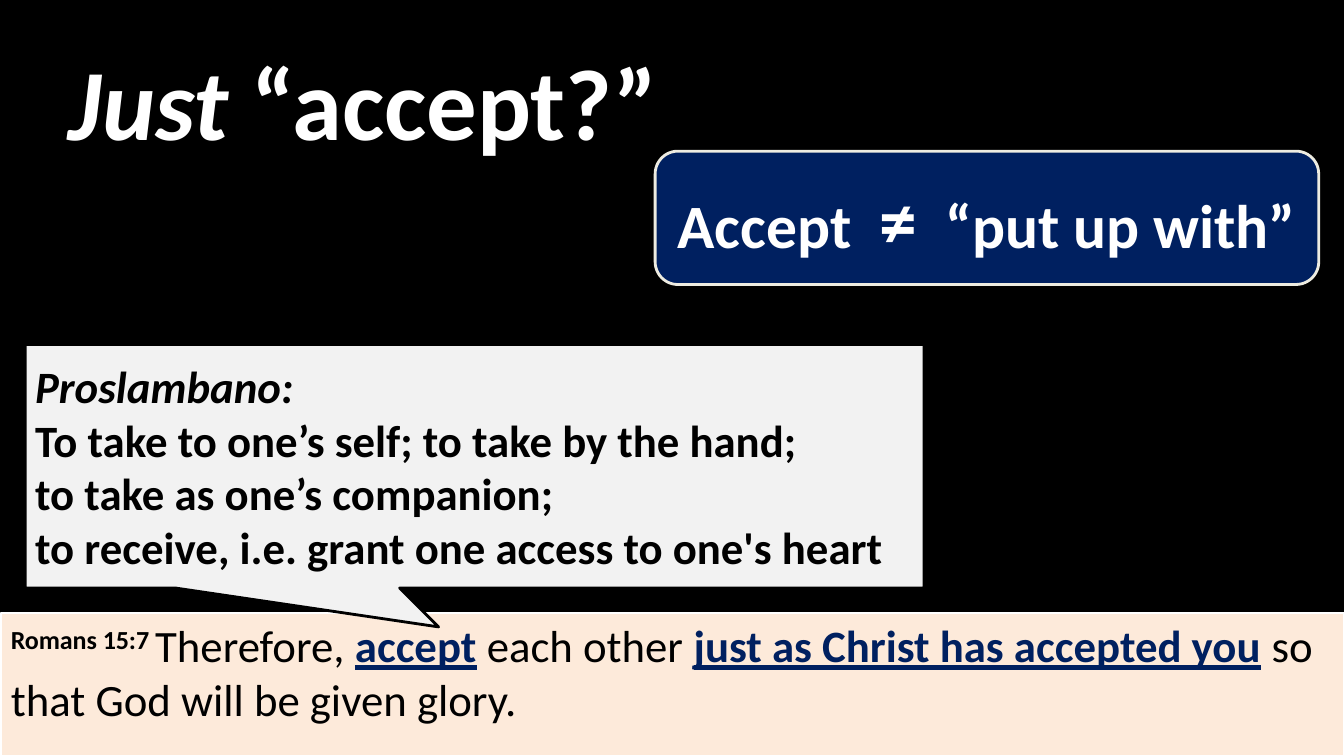
import pptx
import pptx.util
import pptx.dml.color
import pptx.enum.shapes
import pptx.enum.text
import pptx.oxml.ns
import lxml.etree

RGB = pptx.dml.color.RGBColor
SHAPE = pptx.enum.shapes.MSO_SHAPE
ALIGN = pptx.enum.text.PP_ALIGN
ANCHOR = pptx.enum.text.MSO_ANCHOR

BLACK = RGB(0x00, 0x00, 0x00)
WHITE = RGB(0xFF, 0xFF, 0xFF)
NAVY = RGB(0x00, 0x20, 0x60)
PEACH = RGB(0xFD, 0xEA, 0xDA)
GRAY = RGB(0xF2, 0xF2, 0xF2)
CREAM = RGB(0xEE, 0xEC, 0xE1)

FONT = "Calibri"


def px(n):
    return pptx.util.Emu(n * 9525)


def add_box(s, kind, box, fill, line=None, width=2, adj=(), anchor=ANCHOR.MIDDLE):
    sp = s.shapes.add_shape(kind, *map(px, box))
    sp.shadow.inherit = False
    sp.fill.solid()
    sp.fill.fore_color.rgb = fill
    if line is None:
        sp.line.fill.background()
    else:
        sp.line.color.rgb = line
        sp.line.width = pptx.util.Pt(width)
    for i, value in enumerate(adj):
        sp.adjustments[i] = value
    sp.text_frame.word_wrap = True
    sp.text_frame.vertical_anchor = anchor
    return sp


def set_alpha(sp, percent):
    color = sp.fill._xPr.find(".//" + pptx.oxml.ns.qn("a:srgbClr"))
    alpha = lxml.etree.SubElement(color, pptx.oxml.ns.qn("a:alpha"))
    alpha.set("val", str(percent * 1000))


def add_run(p, text, size, color, bold=True, italic=False, underline=False, raised=False):
    r = p.add_run()
    r.text = text
    r.font.name = FONT
    r.font.size = pptx.util.Pt(size)
    r.font.color.rgb = color
    r.font.bold = bold
    r.font.italic = italic
    r.font.underline = underline
    if raised:
        r._r.get_or_add_rPr().set("baseline", "30000")


def first_paragraph(sp, align=ALIGN.LEFT):
    p = sp.text_frame.paragraphs[0]
    p.alignment = align
    return p


def add_title(s):
    sp = add_box(s, SHAPE.RECTANGLE, (56, 32, 1200, 127), BLACK)
    set_alpha(sp, 58)
    p = first_paragraph(sp)
    add_run(p, "Just", 72, WHITE, italic=True)
    add_run(p, " “accept?”", 72, WHITE)


def add_verse(s):
    sp = add_box(s, SHAPE.RECTANGLE, (1, 584, 1279, 136), PEACH, WHITE, 1.5,
                 anchor=ANCHOR.TOP)
    p = first_paragraph(sp)
    add_run(p, "Romans 15:7 ", 32, BLACK, raised=True)
    for text, stressed in (
        ("Therefore, ", False),
        ("accept", True),
        (" each other ", False),
        ("just as Christ has accepted you", True),
        (" so that God will be given glory.", False),
    ):
        add_run(p, text, 32, NAVY if stressed else BLACK, stressed, underline=stressed)


def add_definition(s):
    sp = add_box(s, SHAPE.RECTANGULAR_CALLOUT, (24, 328, 856, 232), GRAY, BLACK,
                 adj=(-0.04, 0.66))
    p = first_paragraph(sp)
    add_run(p, "Proslambano:", 32, BLACK, italic=True)
    for text in (
        "To take to one’s self; to take by the hand;",
        "to take as one’s companion;",
        "to receive, i.e. grant one access to one's heart",
    ):
        p = sp.text_frame.add_paragraph()
        p.alignment = ALIGN.LEFT
        add_run(p, text, 32, BLACK)


def add_contrast(s):
    sp = add_box(s, SHAPE.ROUNDED_RECTANGULAR_CALLOUT, (624, 144, 632, 127), NAVY, CREAM,
                 adj=(-0.22, 0.5, 0.17))
    p = first_paragraph(sp, ALIGN.CENTER)
    for text, size in (("Accept  ", 44), ("≠", 54), ("  “put up with”", 44)):
        add_run(p, text, size, WHITE)


def main():
    prs = pptx.Presentation()
    prs.slide_width, prs.slide_height = px(1280), px(720)
    s = prs.slides.add_slide(prs.slide_layouts[6])
    s.background.fill.solid()
    s.background.fill.fore_color.rgb = BLACK
    add_title(s)
    add_verse(s)
    add_definition(s)
    add_contrast(s)
    prs.save("out.pptx")


if __name__ == "__main__":
    main()
